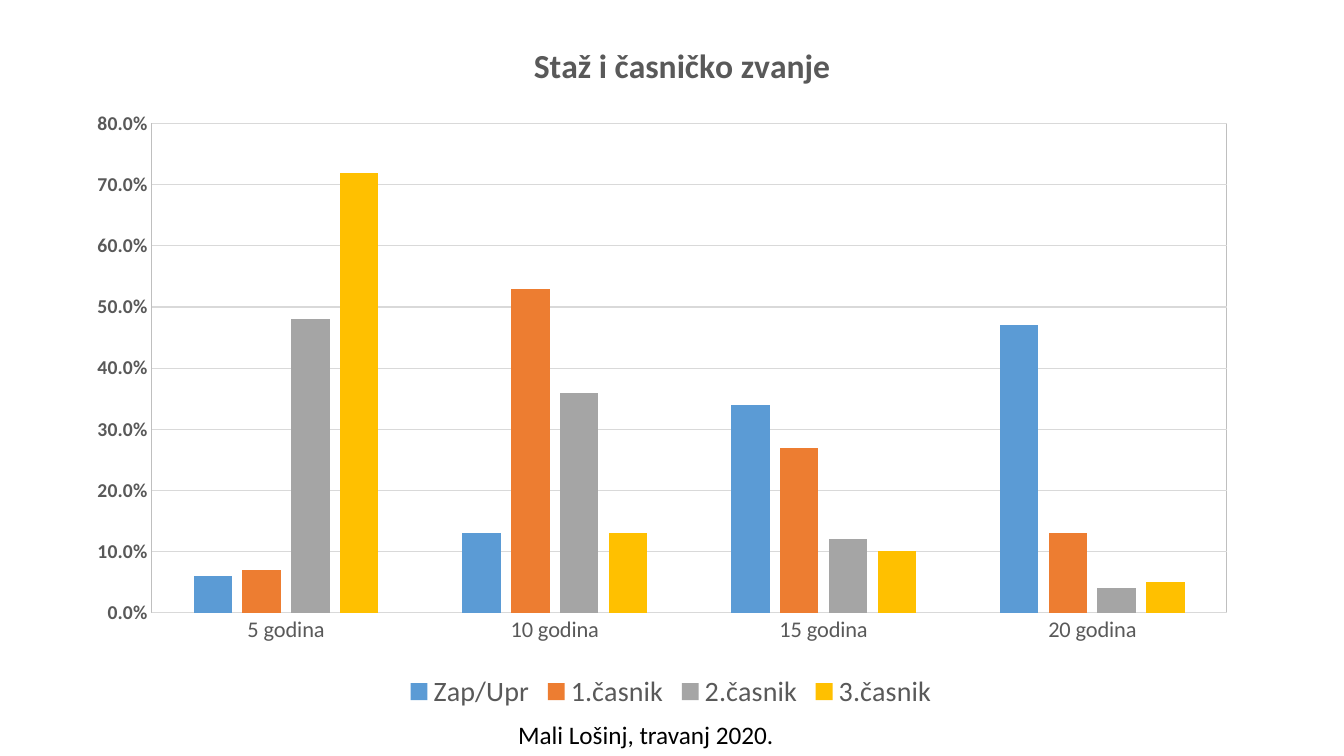
from dataclasses import dataclass

import pptx
import pptx.chart.chart
import pptx.chart.data
import pptx.dml.color
import pptx.enum.chart
import pptx.enum.text
import pptx.oxml
import pptx.oxml.ns
import pptx.text.text
import pptx.util
from pptx.util import Inches

FONT = "Calibri"
BLACK = pptx.dml.color.RGBColor(0x00, 0x00, 0x00)
TEXT_GRAY = pptx.dml.color.RGBColor(0x59, 0x59, 0x59)
GRID_GRAY = pptx.dml.color.RGBColor(0xD9, 0xD9, 0xD9)
BORDER_GRAY = pptx.dml.color.RGBColor(0xBF, 0xBF, 0xBF)
BLUE = pptx.dml.color.RGBColor(0x5B, 0x9B, 0xD5)
ORANGE = pptx.dml.color.RGBColor(0xED, 0x7D, 0x31)
GRAY = pptx.dml.color.RGBColor(0xA5, 0xA5, 0xA5)
YELLOW = pptx.dml.color.RGBColor(0xFF, 0xC0, 0x00)


@dataclass
class Rank:
    name: str
    shares: tuple[float, ...]
    color: pptx.dml.color.RGBColor


CATEGORIES = [f"{years} godina" for years in (5, 10, 15, 20)]
RANKS = [
    Rank("Zap/Upr", (0.06, 0.13, 0.34, 0.47), BLUE),
    Rank("1.časnik", (0.07, 0.53, 0.27, 0.13), ORANGE),
    Rank("2.časnik", (0.48, 0.36, 0.12, 0.04), GRAY),
    Rank("3.časnik", (0.72, 0.13, 0.10, 0.05), YELLOW),
]


def style_font(font: pptx.text.text.Font, size: int,
               color: pptx.dml.color.RGBColor, bold: bool = False) -> None:
    font.name = FONT
    font.size = pptx.util.Pt(size)
    font.bold = bold
    font.color.rgb = color


def set_layout(parent, index: int, settings: dict[str, object]) -> None:
    """Place a chart part by hand, as fractions of the chart."""
    existing = parent.find(pptx.oxml.ns.qn("c:layout"))
    if existing is not None:
        parent.remove(existing)
    items = "".join(f'<c:{key} val="{value}"/>' for key, value in settings.items())
    parent.insert(index, pptx.oxml.parse_xml(
        f'<c:layout {pptx.oxml.ns.nsdecls("c")}>'
        f"<c:manualLayout>{items}</c:manualLayout></c:layout>"))


def style_axes(chart: pptx.chart.chart.Chart) -> None:
    for axis, size, bold in ((chart.category_axis, 16, False),
                             (chart.value_axis, 14, True)):
        axis.major_tick_mark = pptx.enum.chart.XL_TICK_MARK.NONE
        axis.minor_tick_mark = pptx.enum.chart.XL_TICK_MARK.NONE
        style_font(axis.tick_labels.font, size, TEXT_GRAY, bold)

    value_axis = chart.value_axis
    value_axis.minimum_scale, value_axis.maximum_scale = 0, 0.8
    value_axis.major_unit = 0.1
    value_axis.tick_labels.number_format = "0.0%"
    value_axis.tick_labels.number_format_is_linked = False
    value_axis.format.line.fill.background()
    value_axis.has_major_gridlines = True
    for line in (chart.category_axis.format.line,
                 value_axis.major_gridlines.format.line):
        line.color.rgb = GRID_GRAY
        line.width = pptx.util.Pt(0.75)


def add_rank_chart(slide) -> None:
    data = pptx.chart.data.CategoryChartData(number_format="0.0%")
    data.categories = CATEGORIES
    for rank in RANKS:
        data.add_series(rank.name, rank.shares)
    chart = slide.shapes.add_chart(
        pptx.enum.chart.XL_CHART_TYPE.COLUMN_CLUSTERED,
        Inches(0.2), Inches(0.16), Inches(12.91), Inches(6.93), data).chart
    style_font(chart.font, 10, BLACK)

    # Title
    chart.has_title = True
    paragraph = chart.chart_title.text_frame.paragraphs[0]
    paragraph.text = "Staž i časničko zvanje"
    style_font(paragraph.runs[0].font, 24, TEXT_GRAY, bold=True)
    set_layout(chart.chart_title._element, 1,
               {"xMode": "edge", "yMode": "edge", "x": 0.39, "y": 0.03})

    # Columns
    plot = chart.plots[0]
    plot.gap_width, plot.overlap = 219, -27
    plot.vary_by_categories = False
    for series, rank in zip(plot.series, RANKS):
        series.format.fill.solid()
        series.format.fill.fore_color.rgb = rank.color

    style_axes(chart)

    # Legend
    chart.has_legend = True
    chart.legend.position = pptx.enum.chart.XL_LEGEND_POSITION.BOTTOM
    chart.legend.include_in_layout = False
    style_font(chart.legend.font, 20, TEXT_GRAY)

    # Plot area with a thin border
    plot_area = chart._chartSpace.chart.plotArea
    set_layout(plot_area, 0, {
        "layoutTarget": "inner", "xMode": "edge", "yMode": "edge",
        "x": 0.101, "y": 0.154, "w": 0.826, "h": 0.7})
    plot_area.append(pptx.oxml.parse_xml(
        f'<c:spPr {pptx.oxml.ns.nsdecls("c", "a")}><a:noFill/><a:ln w="9525">'
        f'<a:solidFill><a:srgbClr val="{BORDER_GRAY}"/></a:solidFill>'
        "</a:ln></c:spPr>"))


def add_place_and_date(slide) -> None:
    box = slide.shapes.add_textbox(
        Inches(5.04), Inches(7.09), Inches(2.76), Inches(0.4))
    text_frame = box.text_frame
    text_frame.word_wrap = False
    text_frame.auto_size = pptx.enum.text.MSO_AUTO_SIZE.SHAPE_TO_FIT_TEXT
    text_frame.text = "Mali Lošinj, travanj 2020."
    style_font(text_frame.paragraphs[0].runs[0].font, 18, BLACK)


def main() -> None:
    presentation = pptx.Presentation()
    presentation.slide_width = Inches(13.33)
    presentation.slide_height = Inches(7.5)
    slide = presentation.slides.add_slide(presentation.slide_layouts[6])
    add_rank_chart(slide)
    add_place_and_date(slide)
    presentation.save("out.pptx")


if __name__ == "__main__":
    main()
